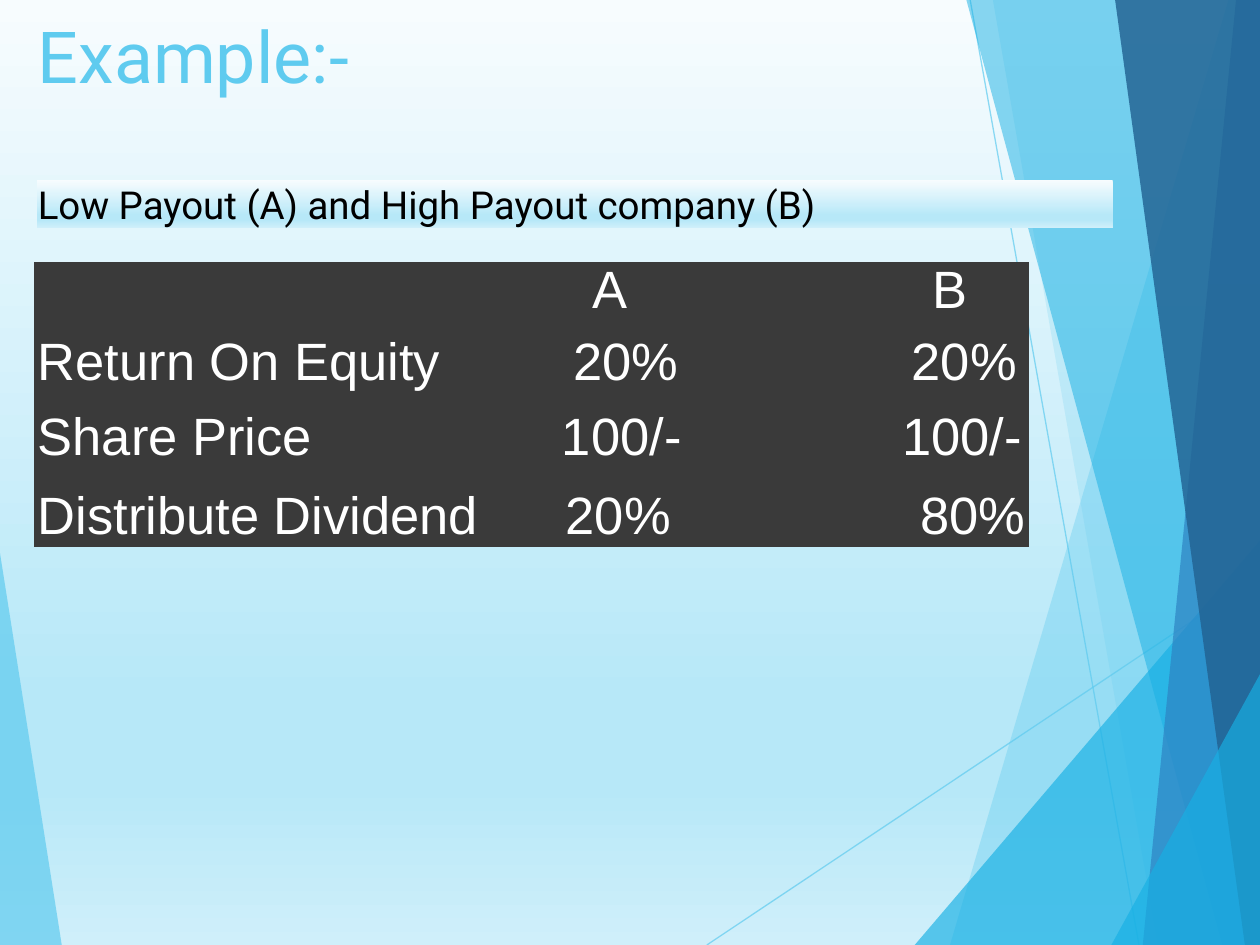
from pptx import Presentation
from pptx.dml.color import RGBColor as Rgb
from pptx.enum.shapes import MSO_CONNECTOR as Conn, MSO_SHAPE as Kind
from pptx.enum.text import MSO_ANCHOR as Anchor, PP_ALIGN as Align
from pptx.oxml.ns import qn
from pptx.util import Inches, Pt
from lxml.etree import SubElement as Sub

SKY, CYAN, BLUE, NAVY = "5FCBEF", "17B0E4", "2E83C3", "226292"
DARK, WHITE, BLACK = "3A3A3A", "FFFFFF", "000000"
STOPS = [(0, "F7FCFE"), (74, "B7E8F8"), (83, "B7E8F8"), (100, "CFEFFA")]
NO_STYLE = "{2D5ABB26-0587-4C30-8999-92F81FD0307C}"

# Outline, colour and opacity in percent
LEFT = [(0, 4.39), (0.49, 7.5), (0, 7.5)], SKY, 70
RAYS = [((5.61, 7.5), (10, 4.57)), ((7.7, 0), (9.04, 7.5))]
FACETS = [
    ([(9.75, 0), (7.54, 7.5), (10, 7.5), (10, 0)], SKY, 36),
    ([(7.88, 0), (9.19, 7.5), (10, 7.5), (10, 0)], SKY, 20),
    ([(7.26, 7.5), (10, 4.29), (10, 7.5)], CYAN, 66),
    ([(7.67, 0), (9.7, 7.5), (10, 7.5), (10, 0)], CYAN, 50),
    ([(9.81, 0), (9.07, 7.5), (10, 7.5), (10, 0)], BLUE, 70),
    ([(8.85, 0), (9.88, 7.5), (10, 7.5), (10, 0)], NAVY, 82),
    ([(8.82, 7.5), (10, 5.35), (10, 7.5)], CYAN, 66),
]

COLS = [3.86, 2.15, 1.89]
ROWS = [0.53, 0.6, 0.6, 0.53]
CELLS = [
    ["", "A", "B"],
    ["Return On Equity", "20%", "20%"],
    ["Share Price", "100/-", "100/-"],
    ["Distribute Dividend", "20%", "80%"],
]
# Inset per cell: from the left, or from the right where negative
INSETS = [
    [0, 0.57, 1.12],
    [0.03, 0.42, -0.1],
    [0.03, 0.33, -0.06],
    [0.03, 0.36, -0.03],
]
LEADS = [33.1, None, None, 35.4]


def paint(color, hue, alpha=100):
    """Set a colour format to a hex colour with an opacity."""
    color.rgb = Rgb.from_string(hue)
    if alpha < 100:
        node = color._xFill.find(qn("a:srgbClr"))
        Sub(node, qn("a:alpha"), val=str(alpha * 1000))


def fade(fill, root):
    """Give a fill, held by the element root, the pale vertical gradient."""
    fill.gradient()
    fill.gradient_angle = 270
    stops = root.find(".//" + qn("a:gsLst"))
    for old in list(stops):
        stops.remove(old)
    for pos, hue in STOPS:
        stop = Sub(stops, qn("a:gs"), pos=str(pos * 1000))
        Sub(stop, qn("a:srgbClr"), val=hue)


def facet(shapes, points, hue, alpha):
    pts = [(Inches(x), Inches(y)) for x, y in points]
    form = shapes.build_freeform(*pts[0])
    form.add_line_segments(pts[1:], close=True)
    shape = form.convert_to_shape()
    shape.shadow.inherit = False
    shape.fill.solid()
    paint(shape.fill.fore_color, hue, alpha)
    shape.line.fill.background()


def ray(shapes, start, end):
    ends = [Inches(v) for v in (*start, *end)]
    line = shapes.add_connector(Conn.STRAIGHT, *ends)
    line.line.width = Pt(0.75)
    line.line.fill.solid()
    paint(line.line.fill.fore_color, SKY, 70)
    Sub(line._element.spPr, qn("a:effectLst"))


def write(frame, text, size, font, hue):
    frame.text = text
    para = frame.paragraphs[0]
    for run in para.runs:
        run.font.size = Pt(size)
        run.font.name = font
        paint(run.font.color, hue)
    return para


def label(shape, text, size, hue):
    frame = shape.text_frame
    frame.word_wrap = True
    frame.vertical_anchor = Anchor.TOP
    frame.margin_left = frame.margin_top = Inches(0.01)
    frame.margin_right = frame.margin_bottom = 0
    para = write(frame, text, size, "Roboto", hue)
    para.alignment = Align.LEFT
    para.space_before = Pt(1)


def band(shapes, box, text):
    shape = shapes.add_shape(Kind.RECTANGLE, *map(Inches, box))
    shape.shadow.inherit = False
    fade(shape.fill, shape._element)
    shape.line.fill.background()
    label(shape, text, 22, BLACK)


def fill_cell(cell, text, inset, lead, head):
    cell.fill.solid()
    paint(cell.fill.fore_color, DARK)
    cell.margin_left = Inches(max(inset, 0))
    cell.margin_right = Inches(max(-inset, 0))
    cell.margin_top = Inches(0 if head else 0.03)
    cell.margin_bottom = 0
    para = write(cell.text_frame, text, 30, "Arial", WHITE)
    para.alignment = Align.RIGHT if inset < 0 else Align.LEFT
    para.space_before = Pt(0 if head else 2)
    if lead:
        para.line_spacing = Pt(lead)


def grid(shapes, left, top):
    size = Inches(sum(COLS)), Inches(sum(ROWS))
    frame = shapes.add_table(len(ROWS), len(COLS), Inches(left), Inches(top), *size)
    table = frame.table
    table.first_row = table.horz_banding = False
    frame._element.find(".//" + qn("a:tableStyleId")).text = NO_STYLE
    for col, width in zip(table.columns, COLS):
        col.width = Inches(width)
    for r, row in enumerate(table.rows):
        row.height = Inches(ROWS[r])
        for c, cell in enumerate(row.cells):
            fill_cell(cell, CELLS[r][c], INSETS[r][c], LEADS[r], r == 0)


def main():
    deck = Presentation()
    deck.slide_width, deck.slide_height = Inches(10), Inches(7.5)
    slide = deck.slides.add_slide(deck.slide_layouts[6])
    shapes = slide.shapes
    fade(slide.background.fill, slide.element)
    facet(shapes, *LEFT)
    for start, end in RAYS:
        ray(shapes, start, end)
    for item in FACETS:
        facet(shapes, *item)
    title = shapes.add_textbox(*map(Inches, (0.29, 0.08, 2.59, 0.71)))
    label(title, "Example:-", 41, SKY)
    band(shapes, (0.29, 1.43, 8.54, 0.38), "Low Payout (A) and High Payout company (B)")
    grid(shapes, 0.27, 2.08)
    deck.save("out.pptx")


if __name__ == "__main__":
    main()
